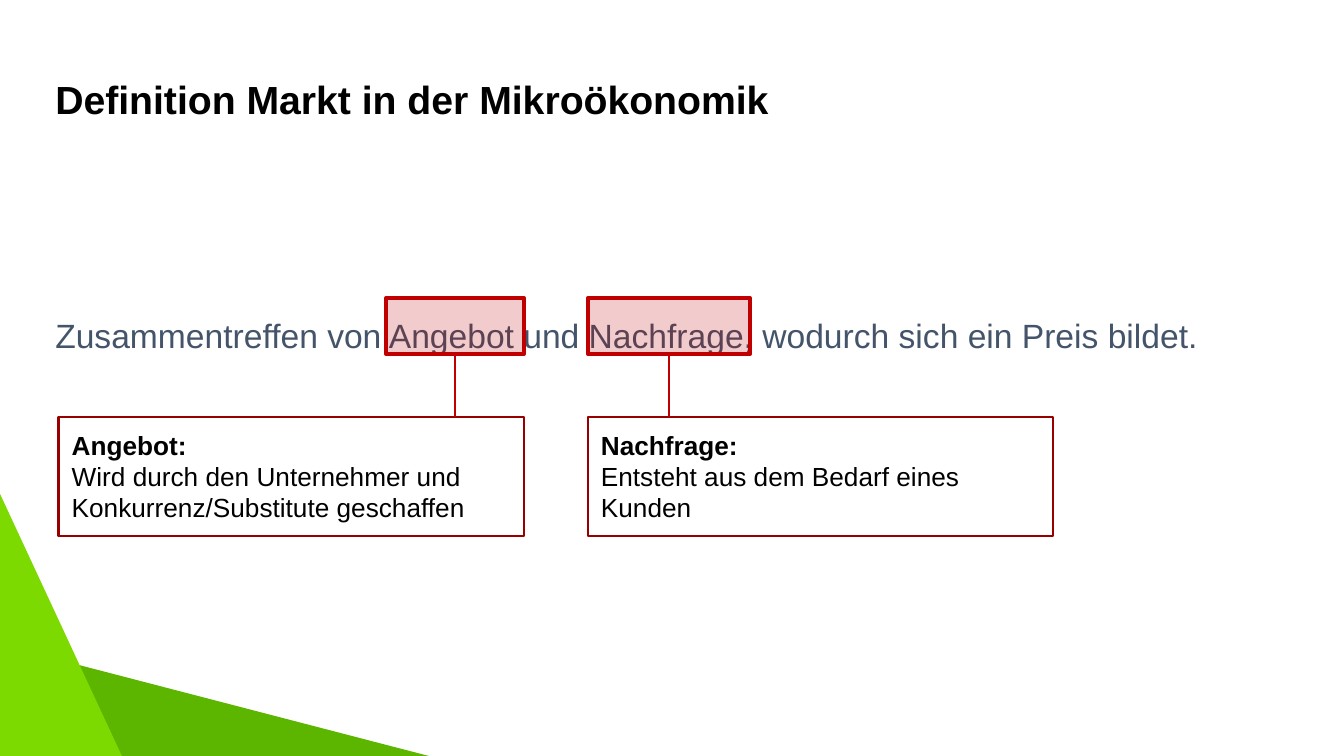
from dataclasses import dataclass

from lxml.etree import SubElement
from pptx import Presentation
from pptx.dml.color import RGBColor
from pptx.enum.shapes import MSO_CONNECTOR, MSO_SHAPE
from pptx.enum.text import MSO_ANCHOR, PP_ALIGN
from pptx.oxml.ns import qn
from pptx.util import Pt


@dataclass(frozen=True)
class Theme:
    font: str = "Arial"
    ink: str = "000000"
    slate: str = "44546A"
    red: str = "C00000"
    wine: str = "980000"
    lime: str = "7DDA00"
    leaf: str = "5CB600"
    title: float = 28
    body: float = 24
    note: float = 18.7


@dataclass(frozen=True)
class Box:
    left: float
    top: float
    width: float
    height: float

    @property
    def mid(self):
        return self.left + self.width / 2

    @property
    def base(self):
        return self.top + self.height

    def points(self):
        return [Pt(n) for n in (self.left, self.top, self.width, self.height)]


THEME = Theme()


def color(code):
    return RGBColor.from_string(code)


def add_form(slide, box, kind, fill=None, line=None, weight=0):
    form = slide.shapes.add_shape(kind, *box.points())
    form.shadow.inherit = False
    if fill:
        form.fill.solid()
        form.fill.fore_color.rgb = color(fill)
    else:
        form.fill.background()
    if line:
        form.line.color.rgb = color(line)
        form.line.width = Pt(weight)
    else:
        form.line.fill.background()
    return form


def set_frame(frame, anchor, inset):
    frame.word_wrap = True
    frame.vertical_anchor = anchor
    frame.margin_left = frame.margin_right = Pt(inset)
    frame.margin_top = frame.margin_bottom = Pt(inset)


def set_text(para, text, size, ink, bold=False):
    para.text = text
    para.alignment = PP_ALIGN.LEFT
    para.font.name = THEME.font
    para.font.size = Pt(size)
    para.font.bold = bold
    para.font.color.rgb = color(ink)


def draw_corner(slide, box):
    low = Box(box.left + 4.3, box.base - 198.7, 206.6, 397.4)
    wedge = add_form(slide, low, MSO_SHAPE.ISOSCELES_TRIANGLE, THEME.leaf)
    wedge.rotation = 90
    peak = Box(box.left - 91.4, box.top, 182.8, 196.6)
    add_form(slide, peak, MSO_SHAPE.ISOSCELES_TRIANGLE, THEME.lime)


def draw_title(slide, box, text):
    frame = slide.shapes.add_textbox(*box.points()).text_frame
    set_frame(frame, MSO_ANCHOR.TOP, 7.2)
    set_text(frame.paragraphs[0], text, THEME.title, THEME.ink, True)


def draw_body(slide, box, text):
    frame = slide.shapes.add_textbox(*box.points()).text_frame
    set_frame(frame, MSO_ANCHOR.MIDDLE, 7.2)
    frame.margin_bottom = Pt(134.2)
    para = frame.paragraphs[0]
    set_text(para, text, THEME.body, THEME.slate)
    para.line_spacing = 1.15


def draw_mark(slide, box):
    mark = add_form(slide, box, MSO_SHAPE.RECTANGLE, THEME.red, THEME.red, 3)
    tint = mark.fill._xPr.find(qn("a:solidFill"))[0]
    SubElement(tint, qn("a:alpha"), val="20000")


def draw_note(slide, box, head, text):
    note = add_form(slide, box, MSO_SHAPE.RECTANGLE, line=THEME.wine, weight=1.5)
    frame = note.text_frame
    set_frame(frame, MSO_ANCHOR.BOTTOM, 9.4)
    set_text(frame.paragraphs[0], head, THEME.note, THEME.ink, True)
    set_text(frame.add_paragraph(), text, THEME.note, THEME.ink)


def draw_link(slide, mark, note):
    ends = [Pt(n) for n in (mark.mid, mark.base, mark.mid, note.top)]
    link = slide.shapes.add_connector(MSO_CONNECTOR.STRAIGHT, *ends)
    link.line.color.rgb = color(THEME.red)
    link.line.width = Pt(1.5)
    SubElement(link._element.spPr, qn("a:effectLst"))


def main():
    deck = Presentation()
    deck.slide_width, deck.slide_height = Pt(960), Pt(540)
    slide = deck.slides.add_slide(deck.slide_layouts[6])

    draw_corner(slide, Box(0, 352.8, 306.4, 187.2))
    draw_title(slide, Box(32.4, 46.8, 894.2, 60.5), "Definition Markt in der Mikroökonomik")
    draw_body(
        slide,
        Box(32.4, 121, 894.2, 358.6),
        "Zusammentreffen von Angebot und Nachfrage, wodurch sich ein Preis bildet.",
    )

    terms = [
        (275.8, 98.6, 41.8, "Angebot:",
         "Wird durch den Unternehmer und Konkurrenz/Substitute geschaffen"),
        (419.8, 115.9, 419.8, "Nachfrage:", "Entsteht aus dem Bedarf eines Kunden"),
    ]
    for left, width, start, head, text in terms:
        mark = Box(left, 213.1, width, 39.6)
        note = Box(start, 298.1, 332.6, 85)
        draw_mark(slide, mark)
        draw_note(slide, note, head, text)
        draw_link(slide, mark, note)

    deck.save("out.pptx")


if __name__ == "__main__":
    main()
